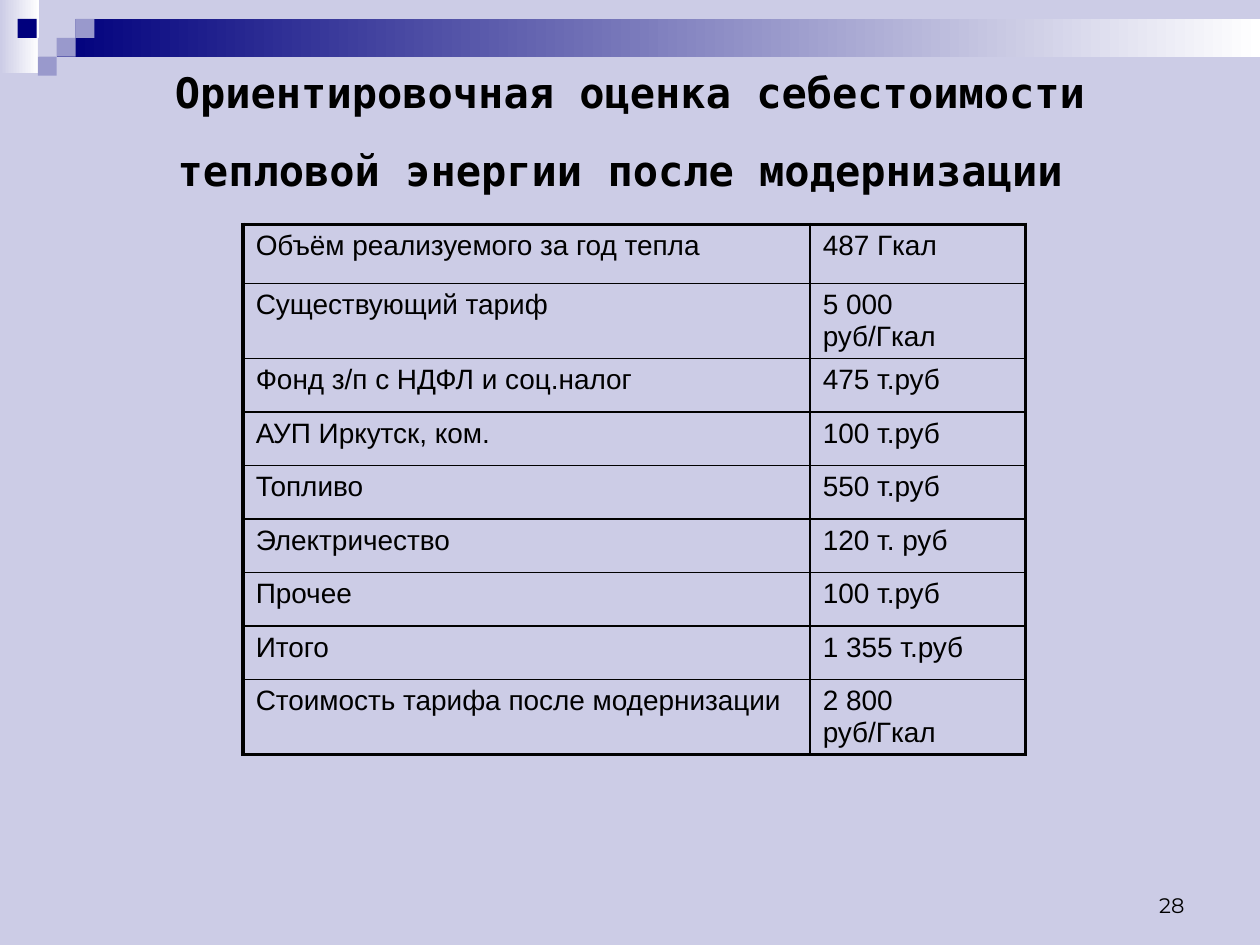
from lxml.etree import SubElement
from pptx import Presentation
from pptx.dml.color import RGBColor
from pptx.enum.shapes import MSO_SHAPE as Shape
from pptx.enum.text import MSO_ANCHOR as Anchor, MSO_AUTO_SIZE as AutoSize, PP_ALIGN as Align
from pptx.oxml.ns import qn
from pptx.util import Inches, Pt

PALE, LILAC, NAVY, WHITE, BLACK = "CCCCE6", "9999CC", "00007D", "FFFFFF", "000000"
TITLE = "Ориентировочная оценка себестоимости тепловой энергии после модернизации"
ROWS = [
    ("Объём реализуемого за год тепла", "487 Гкал"),
    ("Существующий тариф", "5 000 руб/Гкал"),
    ("Фонд з/п с НДФЛ и соц.налог", "475 т.руб"),
    ("АУП Иркутск, ком.", "100 т.руб"),
    ("Топливо", "550 т.руб"),
    ("Электричество", "120 т. руб"),
    ("Прочее", "100 т.руб"),
    ("Итого", "1 355 т.руб"),
    ("Стоимость тарифа после модернизации", "2 800 руб/Гкал"),
]
COLUMN_WIDTHS = (4.5, 1.71)
FIRST_ROW, TABLE_HEIGHT = 0.47, 3.87
BANDS = [(0, 0, 0.31, 0.58, PALE), (0.45, 0.15, 9.55, 0.3, NAVY)]
SQUARE = 0.15
SQUARES = [
    (0.45, 0.15, PALE), (0.6, 0, PALE), (0.6, 0.15, LILAC), (0.3, 0.3, PALE),
    (0.14, 0.15, NAVY), (0.45, 0.3, LILAC), (0.3, 0.45, LILAC),
]


def color(value):
    return RGBColor.from_string(value)


def paint(fill, value):
    fill.solid()
    fill.fore_color.rgb = color(value)


def add_text(frame, text, size=16, font="Arial", bold=False, align=Align.LEFT):
    para = frame.paragraphs[0]
    para.alignment = align
    span = para.add_run()
    span.text = text
    span.font.size, span.font.name, span.font.bold = Pt(size), font, bold
    span.font.color.rgb = color(BLACK)


def add_block(page, left, top, width, height, start, end=None):
    block = page.shapes.add_shape(Shape.RECTANGLE, *map(Inches, (left, top, width, height)))
    block.shadow.inherit = False
    block.line.fill.background()
    if end is None:
        paint(block.fill, start)
        return
    block.fill.gradient()
    block.fill.gradient_angle = 0
    for stop, value, position in zip(block.fill.gradient_stops, (start, end), (0, 1)):
        stop.color.rgb = color(value)
        stop.position = position


def set_borders(cell, widths):
    properties = cell._tc.get_or_add_tcPr()
    for index, (side, width) in enumerate(widths.items()):
        line = SubElement(properties, qn(f"a:ln{side}"), w=str(Pt(width)))
        fill = SubElement(line, qn("a:solidFill"))
        SubElement(fill, qn("a:srgbClr"), val=BLACK)
        properties.remove(line)
        properties.insert(index, line)


def add_cost_table(page):
    last_row, last_column = len(ROWS) - 1, len(COLUMN_WIDTHS) - 1
    table = page.shapes.add_table(
        len(ROWS), len(COLUMN_WIDTHS), Inches(1.93), Inches(1.78),
        Inches(sum(COLUMN_WIDTHS)), Inches(TABLE_HEIGHT)).table
    table.first_row = table.horz_banding = False
    for column, width in zip(table.columns, COLUMN_WIDTHS):
        column.width = Inches(width)
    for r, values in enumerate(ROWS):
        height = (TABLE_HEIGHT - FIRST_ROW) / last_row if r else FIRST_ROW
        table.rows[r].height = Inches(height)
        for c, text in enumerate(values):
            cell = table.cell(r, c)
            paint(cell.fill, PALE)
            add_text(cell.text_frame, text)
            outer = {"L": c == 0, "R": c == last_column, "T": r == 0, "B": r == last_row}
            set_borders(cell, {side: 2.25 if edge else 1 for side, edge in outer.items()})


def main():
    """Build the heating cost estimate slide."""
    deck = Presentation()
    deck.slide_width, deck.slide_height = Inches(10), Inches(7.5)
    page = deck.slides.add_slide(deck.slide_layouts[5])
    paint(page.background.fill, PALE)
    for left, top, width, height, start in BANDS:
        add_block(page, left, top, width, height, start, WHITE)
    for left, top, value in SQUARES:
        add_block(page, left, top, SQUARE, SQUARE, value)

    title = page.shapes.title
    title.left, title.top, title.width, title.height = map(Inches, (0.5, 0.5, 9, 1.12))
    frame = title.text_frame
    frame.auto_size, frame.vertical_anchor = AutoSize.NONE, Anchor.MIDDLE
    add_text(frame, TITLE, size=24, font="DejaVu Sans Mono", bold=True, align=Align.CENTER)
    add_text(frame, " ", size=40, align=Align.CENTER)

    add_cost_table(page)

    number = page.shapes.add_textbox(*map(Inches, (7.17, 6.83, 2.33, 0.5))).text_frame
    number.word_wrap, number.vertical_anchor = True, Anchor.BOTTOM
    add_text(number, "28", size=12, font="Montserrat", align=Align.RIGHT)
    deck.save("out.pptx")


if __name__ == "__main__":
    main()
